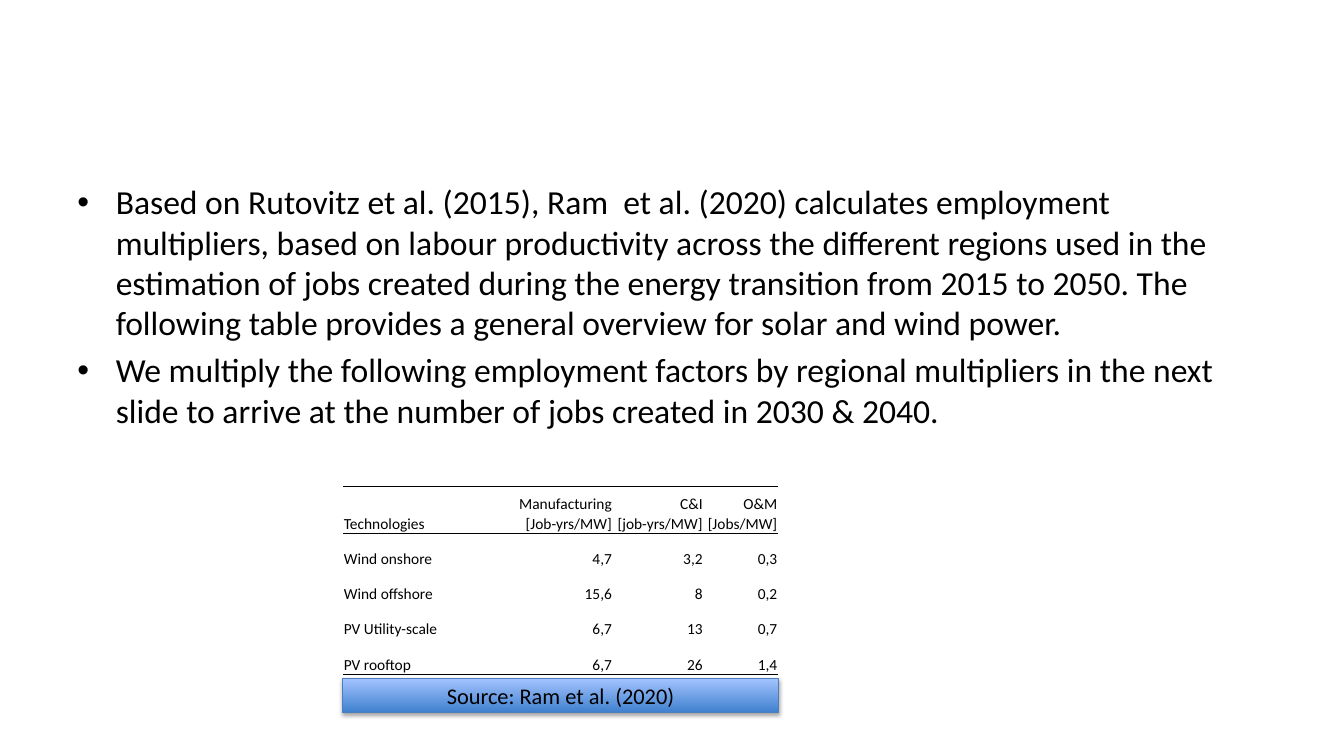
from lxml.etree import SubElement
from pptx import Presentation
from pptx.dml.color import RGBColor
from pptx.enum.shapes import MSO_SHAPE
from pptx.enum.text import MSO_ANCHOR, PP_ALIGN
from pptx.oxml.ns import qn
from pptx.util import Pt

PX = 9144
BLACK = "000000"
BULLETS = [
    "Based on Rutovitz et al. (2015), Ram  et al. (2020) calculates employment "
    "multipliers, based on labour productivity across the different regions used in the "
    "estimation of jobs created during the energy transition from 2015 to 2050. The "
    "following table provides a general overview for solar and wind power.",
    "We multiply the following employment factors by regional multipliers in the next "
    "slide to arrive at the number of jobs created in 2030 & 2040.",
]
FACTORS = [
    ["Technologies", "Manufacturing\n[Job-yrs/MW]", "C&I\n[job-yrs/MW]", "O&M\n[Jobs/MW]"],
    ["Wind onshore", "4,7", "3,2", "0,3"],
    ["Wind offshore", "15,6", "8", "0,2"],
    ["PV Utility-scale", "6,7", "13", "0,7"],
    ["PV rooftop", "6,7", "26", "1,4"],
]
COLUMN_WIDTHS = [171, 97, 90, 74]
ROW_HEIGHTS = [47, 35, 35, 35, 35]


def color(hex_code):
    """Turn a hex string into a colour."""
    return RGBColor.from_string(hex_code)


def emu(box):
    """Turn lengths in px into EMU."""
    return [length * PX for length in box]


def add_text(para, text, size, align=PP_ALIGN.LEFT):
    """Write text into a paragraph, one run per line."""
    para.alignment = align
    for number, line in enumerate(text.split("\n")):
        if number:
            para.add_line_break()
        span = para.add_run()
        span.text = line
        span.font.name = "Calibri"
        span.font.size = Pt(size)
        span.font.color.rgb = color(BLACK)


def add_bullets(page, box):
    """Place the bulleted paragraphs in the box."""
    frame = page.shapes.add_textbox(*emu(box)).text_frame
    frame.word_wrap = True
    for number, text in enumerate(BULLETS):
        para = frame.add_paragraph() if number else frame.paragraphs[0]
        para.space_before = Pt(4.8)
        add_text(para, text, 24)
        properties = para._p.get_or_add_pPr()
        properties.set("marL", str(38 * PX))
        properties.set("indent", str(-38 * PX))
        SubElement(properties, qn("a:buFont"), typeface="Arial")
        SubElement(properties, qn("a:buChar"), char="•")


def set_borders(cell, ruled_sides):
    """Rule the given sides of a cell and clear the others."""
    properties = cell._tc.get_or_add_tcPr()
    for side in "LRTB":
        border = SubElement(properties, qn(f"a:ln{side}"), w=str(Pt(0.5)))
        if side in ruled_sides:
            fill = SubElement(border, qn("a:solidFill"))
            SubElement(fill, qn("a:srgbClr"), val=BLACK)
        else:
            SubElement(border, qn("a:noFill"))


def add_factor_table(page, box):
    """Place the employment factor table in the box."""
    table = page.shapes.add_table(len(FACTORS), len(COLUMN_WIDTHS), *emu(box)).table
    table.first_row = table.horz_banding = False
    for column, width in zip(table.columns, COLUMN_WIDTHS):
        column.width = width * PX
    ruled = {0: "TB", 1: "T", len(FACTORS) - 1: "B"}
    for row_number, values in enumerate(FACTORS):
        table.rows[row_number].height = ROW_HEIGHTS[row_number] * PX
        for column_number, value in enumerate(values):
            cell = table.cell(row_number, column_number)
            cell.margin_left = cell.margin_right = cell.margin_top = PX
            cell.margin_bottom = 0
            cell.vertical_anchor = MSO_ANCHOR.BOTTOM
            align = PP_ALIGN.RIGHT if column_number else PP_ALIGN.LEFT
            add_text(cell.text_frame.paragraphs[0], value, 11, align)
            set_borders(cell, ruled.get(row_number, ""))
            cell.fill.background()


def add_source_bar(page, box):
    """Place the shaded source bar in the box."""
    bar = page.shapes.add_shape(MSO_SHAPE.RECTANGLE, *emu(box))
    bar.fill.gradient()
    bar.fill.gradient_angle = 90
    for stop, shade in zip(bar.fill.gradient_stops, ["3F80CE", "A4C4FF"]):
        stop.color.rgb = color(shade)
    bar.line.color.rgb = color("4B7EBC")
    bar.line.width = Pt(0.75)
    bar.shadow.inherit = False
    effects = bar._element.spPr.find(qn("a:effectLst"))
    shadow = SubElement(effects, qn("a:outerShdw"), blurRad=str(Pt(3.1)),
                        dist=str(Pt(1.8)), dir="5400000", rotWithShape="0")
    shade = SubElement(shadow, qn("a:srgbClr"), val=BLACK)
    SubElement(shade, qn("a:alpha"), val="35000")
    bar.text_frame.vertical_anchor = MSO_ANCHOR.MIDDLE
    add_text(bar.text_frame.paragraphs[0], "Source: Ram et al. (2020)", 16, PP_ALIGN.CENTER)


def main():
    """Build the employment factor slide."""
    deck = Presentation()
    deck.slide_width, deck.slide_height = emu([1333, 750])
    page = deck.slides.add_slide(deck.slide_layouts[6])
    add_bullets(page, (67, 175, 1200, 495))
    add_factor_table(page, (340, 482, sum(COLUMN_WIDTHS), sum(ROW_HEIGHTS)))
    add_source_bar(page, (340, 673, sum(COLUMN_WIDTHS), 34))
    deck.save("out.pptx")


if __name__ == "__main__":
    main()
